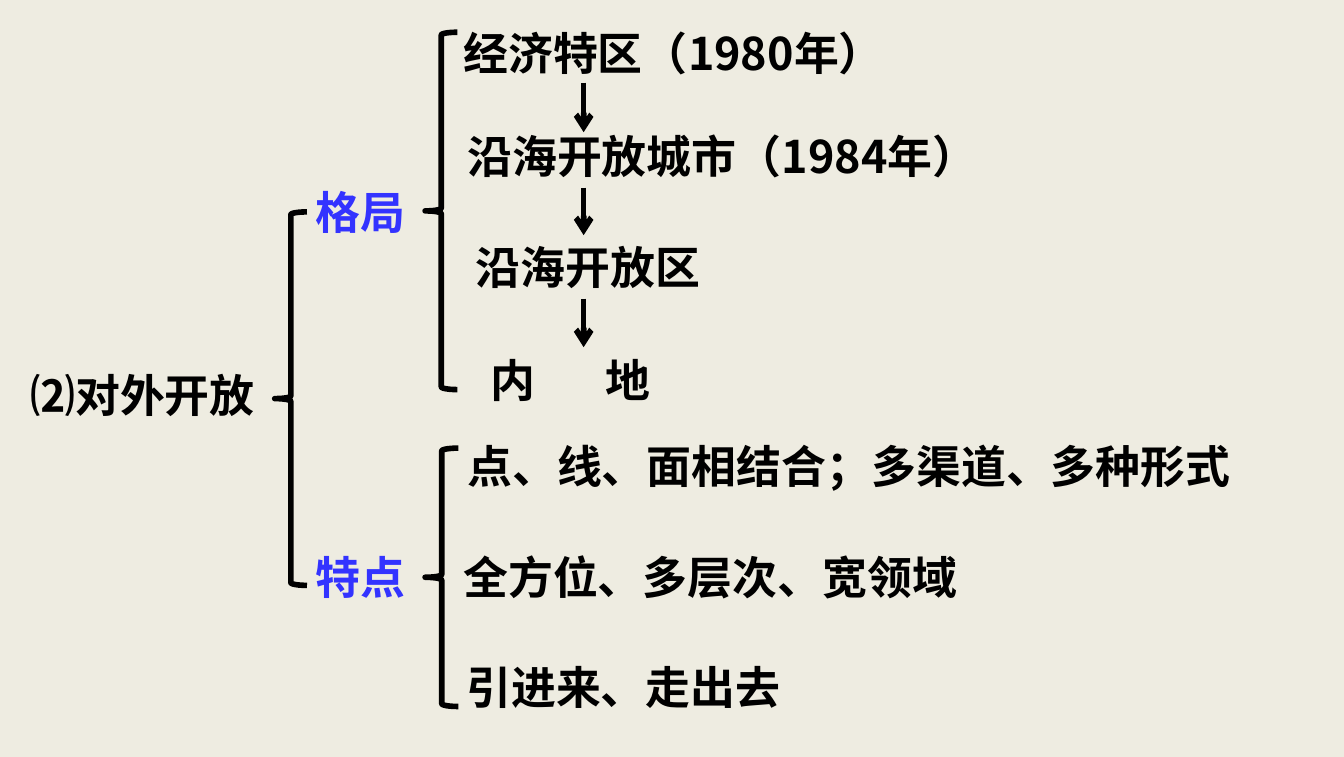
from lxml import etree
from pptx import Presentation
from pptx.dml.color import RGBColor
from pptx.enum.shapes import MSO_CONNECTOR, MSO_SHAPE
from pptx.enum.text import MSO_ANCHOR, MSO_AUTO_SIZE, PP_ALIGN
from pptx.oxml.ns import qn
from pptx.util import Inches, Pt

STRAIGHT = MSO_CONNECTOR.STRAIGHT
LEFT_BRACE = MSO_SHAPE.LEFT_BRACE
TOP = MSO_ANCHOR.TOP
FIT_SHAPE = MSO_AUTO_SIZE.SHAPE_TO_FIT_TEXT
LEFT = PP_ALIGN.LEFT

FONT = "Noto Sans CJK SC"
BLACK, BLUE, CREAM = "000000", "3333FF", "EEECE1"
TEXT_HEIGHT = 0.64
LINE_WIDTH = 4
ARROW_X = 5.78
TITLE_ONLY = 5

# left, top, width, height
BRACES = [
    (2.72, 2.1, 0.32, 3.7),
    (4.21, 0.32, 0.32, 3.54),
    (4.21, 4.44, 0.33, 2.56),
]
# text, left, top, width
BRANCHES = [("格局", 3.03, 1.78, 1.1), ("特点", 3.03, 5.4, 1.1)]
FEATURES = [
    ("点、线、面相结合；多渠道、多种形式", 4.53, 4.3, 7.83),
    ("全方位、多层次、宽领域", 4.49, 5.4, 5.14),
    ("引进来、走出去", 4.52, 6.49, 3.34),
]
# text, left, top, width, wraps
STAGES = [
    ("经济特区（1980年）", 4.49, 0.21, 4.4, True),
    ("沿海开放城市（1984年）", 4.53, 1.23, 5.3, True),
    ("沿海开放区", 4.61, 2.33, 2.45, False),
]
# top, bottom
ARROWS = [(0.82, 1.31), (1.86, 2.33), (2.96, 3.44)]


def color(value):
    return RGBColor.from_string(value)


def write_text(shape, text, text_color=BLACK, wrap=False):
    frame = shape.text_frame
    frame.word_wrap = wrap
    frame.auto_size = FIT_SHAPE
    frame.vertical_anchor = TOP
    paragraph = frame.paragraphs[0]
    paragraph.alignment = LEFT
    run = paragraph.add_run()
    run.text = text
    font = run.font
    font.name, font.size, font.bold = FONT, Pt(32), True
    font.color.rgb = color(text_color)
    east_asian = etree.SubElement(run._r.get_or_add_rPr(), qn("a:ea"))
    east_asian.set("typeface", FONT)
    return paragraph


def add_label(slide, text, left, top, width, text_color=BLACK, wrap=False):
    box = slide.shapes.add_textbox(
        Inches(left), Inches(top), Inches(width), Inches(TEXT_HEIGHT))
    return write_text(box, text, text_color, wrap)


def add_tab_stop(paragraph, position):
    tabs = etree.SubElement(paragraph._p.get_or_add_pPr(), qn("a:tabLst"))
    tab = etree.SubElement(tabs, qn("a:tab"))
    tab.set("pos", str(Inches(position)))
    tab.set("algn", "l")


def style_line(line):
    line.color.rgb = color(BLACK)
    line.width = Pt(LINE_WIDTH)


def add_brace(slide, left, top, width, height):
    brace = slide.shapes.add_shape(
        LEFT_BRACE, Inches(left), Inches(top), Inches(width), Inches(height))
    brace.shadow.inherit = False
    brace.fill.background()
    style_line(brace.line)


def add_down_arrow(slide, top, bottom):
    arrow = slide.shapes.add_connector(
        STRAIGHT, Inches(ARROW_X), Inches(top), Inches(ARROW_X), Inches(bottom))
    style_line(arrow.line)
    tail = etree.SubElement(arrow.line._get_or_add_ln(), qn("a:tailEnd"))
    tail.set("type", "arrow")
    etree.SubElement(arrow._element.spPr, qn("a:effectLst"))


def main():
    presentation = Presentation()
    presentation.slide_width = Inches(13.31)
    presentation.slide_height = Inches(7.5)
    slide = presentation.slides.add_slide(presentation.slide_layouts[TITLE_ONLY])
    slide.background.fill.solid()
    slide.background.fill.fore_color.rgb = color(CREAM)

    # Root topic
    title = slide.shapes.title
    title.left, title.top = Inches(0.2), Inches(3.59)
    title.width, title.height = Inches(2.45), Inches(TEXT_HEIGHT)
    write_text(title, "⑵对外开放")

    # Braces and their branches
    for brace in BRACES:
        add_brace(slide, *brace)
    for branch in BRANCHES:
        add_label(slide, *branch, text_color=BLUE)

    # Stages of opening up, joined by arrows
    for text, left, top, width, wrap in STAGES:
        add_label(slide, text, left, top, width, wrap=wrap)
    inland = add_label(slide, "内\t地", 4.76, 3.44, 2.03, wrap=True)
    add_tab_stop(inland, 1.14)
    for top, bottom in ARROWS:
        add_down_arrow(slide, top, bottom)

    # Features
    for feature in FEATURES:
        add_label(slide, *feature)

    presentation.save("out.pptx")


if __name__ == "__main__":
    main()
